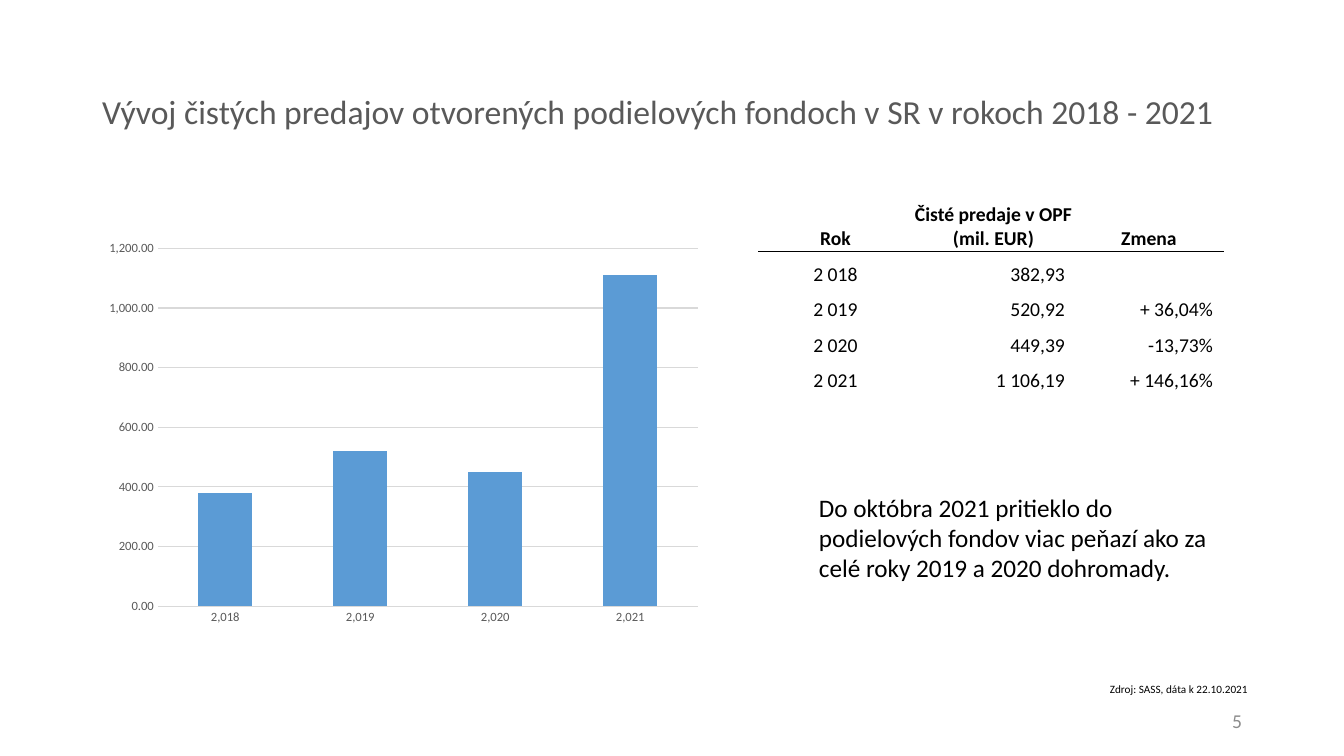
import lxml.etree
import pptx
import pptx.chart.data
import pptx.dml.color
import pptx.enum.chart
import pptx.enum.text
import pptx.oxml.ns
import pptx.util

EMU_PER_PX = 914400 / 100.8
ALIGN = pptx.enum.text.PP_ALIGN
ANCHOR = pptx.enum.text.MSO_ANCHOR
FONT = "Calibri"
BLACK, GREY, LIGHT_GREY, BLUE = "000000", "595959", "D9D9D9", "5B9BD5"
SALES_HEADING = "Čisté predaje v OPF (mil. EUR)"


def px(length):
    """Turn whole pixels into EMU."""
    return pptx.util.Emu(round(length * EMU_PER_PX))


def color(hex_string):
    """Turn a hex string into a colour."""
    return pptx.dml.color.RGBColor.from_string(hex_string)


def format_font(font, size, hex_string=BLACK, bold=False):
    """Set the typeface, size, colour and weight of a font."""
    font.name = FONT
    font.size = pptx.util.Pt(size)
    font.color.rgb = color(hex_string)
    font.bold = bold


def write(frame, text, size=14, hex_string=BLACK, bold=False,
          align=ALIGN.LEFT, anchor=ANCHOR.TOP, line_spacing=None):
    """Write one formatted paragraph into a text frame."""
    frame.word_wrap = True
    frame.vertical_anchor = anchor
    paragraph = frame.paragraphs[0]
    paragraph.alignment = align
    paragraph.line_spacing = line_spacing
    run = paragraph.add_run()
    run.text = text
    format_font(run.font, size, hex_string, bold)


def add_border(cell, side):
    """Draw a thin black line on one side of a cell."""
    line = lxml.etree.Element(pptx.oxml.ns.qn(f"a:{side}"), w="6350")
    fill = lxml.etree.SubElement(line, pptx.oxml.ns.qn("a:solidFill"))
    lxml.etree.SubElement(fill, pptx.oxml.ns.qn("a:srgbClr"), val=BLACK)
    cell._tc.get_or_add_tcPr().insert(0, line)


class SlideBuilder:
    """Hold the current slide and add each kind of element to it."""

    def __init__(self, presentation):
        """Start a slide with a title placeholder."""
        self.slide = presentation.slides.add_slide(presentation.slide_layouts[5])

    def title(self, text, left, top, width, height):
        """Move and fill the title placeholder."""
        shape = self.slide.shapes.title
        shape.left, shape.top = px(left), px(top)
        shape.width, shape.height = px(width), px(height)
        shape.text_frame.auto_size = pptx.enum.text.MSO_AUTO_SIZE.NONE
        write(shape.text_frame, text, size=24, hex_string=GREY,
              anchor=ANCHOR.MIDDLE, line_spacing=0.9)

    def text(self, text, left, top, width, height, **style):
        """Add a text box."""
        shape = self.slide.shapes.add_textbox(px(left), px(top), px(width), px(height))
        write(shape.text_frame, text, **style)

    def column_chart(self, categories, values, left, top, width, height):
        """Add a stacked column chart with one series."""
        data = pptx.chart.data.CategoryChartData()
        data.categories = categories
        data.add_series(SALES_HEADING, values)
        chart = self.slide.shapes.add_chart(
            pptx.enum.chart.XL_CHART_TYPE.COLUMN_STACKED,
            px(left), px(top), px(width), px(height), data).chart
        chart.has_legend = chart.has_title = False
        format_font(chart.font, 10)
        plot = chart.plots[0]
        plot.vary_by_categories = False
        plot.gap_width, plot.overlap = 150, 100
        bars = plot.series[0].format.fill
        bars.solid()
        bars.fore_color.rgb = color(BLUE)
        for axis in (chart.category_axis, chart.value_axis):
            axis.major_tick_mark = pptx.enum.chart.XL_TICK_MARK.NONE
            axis.minor_tick_mark = pptx.enum.chart.XL_TICK_MARK.NONE
            axis.format.line.fill.background()
            format_font(axis.tick_labels.font, 9, GREY)
        value_axis = chart.value_axis
        value_axis.minimum_scale, value_axis.maximum_scale = 0, 1200
        value_axis.major_unit = 200
        value_axis.tick_labels.number_format = "#,##0.00"
        value_axis.tick_labels.number_format_is_linked = False
        value_axis.has_major_gridlines = True
        grid_line = value_axis.major_gridlines.format.line
        grid_line.color.rgb = color(LIGHT_GREY)
        grid_line.width = pptx.util.Pt(0.75)

    def table(self, rows, left, top, widths, heights):
        """Add a plain table with a line under its heading row."""
        table = self.slide.shapes.add_table(
            len(rows), len(widths), px(left), px(top),
            px(sum(widths)), px(sum(heights))).table
        table.first_row = table.horz_banding = False
        for column, width in zip(table.columns, widths):
            column.width = px(width)
        for row, height in zip(table.rows, heights):
            row.height = px(height)
        for row_index, row in enumerate(rows):
            for column_index, text in enumerate(row):
                cell = table.cell(row_index, column_index)
                centred = row_index == 0 or column_index == 0
                cell.margin_left = cell.margin_top = cell.margin_bottom = 0
                cell.margin_right = 0 if centred else px(10)
                cell.vertical_anchor = ANCHOR.BOTTOM
                cell.fill.background()
                write(cell.text_frame, text, bold=row_index == 0,
                      align=ALIGN.CENTER if centred else ALIGN.RIGHT,
                      anchor=None)
                if row_index < 2:
                    add_border(cell, ("lnB", "lnT")[row_index])


def main():
    """Build and save the slide."""
    presentation = pptx.Presentation()
    presentation.slide_width, presentation.slide_height = px(1344), px(756)
    builder = SlideBuilder(presentation)
    builder.title("Vývoj čistých predajov otvorených podielových fondoch v SR "
                  "v rokoch 2018 - 2021", 92, 41, 1204, 146)
    builder.text("5", 950, 701, 302, 40, hex_string="8C8C8C",
                 align=ALIGN.RIGHT, anchor=ANCHOR.MIDDLE)
    builder.column_chart(["2,018", "2,019", "2,020", "2,021"],
                         [380, 520, 450, 1110], 97, 233, 613, 400)
    builder.table([
        ["Rok", SALES_HEADING, "Zmena"],
        ["2 018", "382,93", ""],
        ["2 019", "520,92", "+ 36,04%"],
        ["2 020", "449,39", "-13,73%"],
        ["2 021", "1 106,19", "+ 146,16%"],
    ], 759, 180, [153, 163, 148], [71, 36, 35, 36, 35])
    builder.text("Zdroj: SASS, dáta k 22.10.2021", 1100, 677, 163, 24, size=8)
    builder.text("Do októbra 2021 pritieklo do podielových fondov viac peňazí "
                 "ako za celé roky 2019 a 2020 dohromady.",
                 809, 487, 410, 102, size=18)
    presentation.save("out.pptx")


if __name__ == "__main__":
    main()
